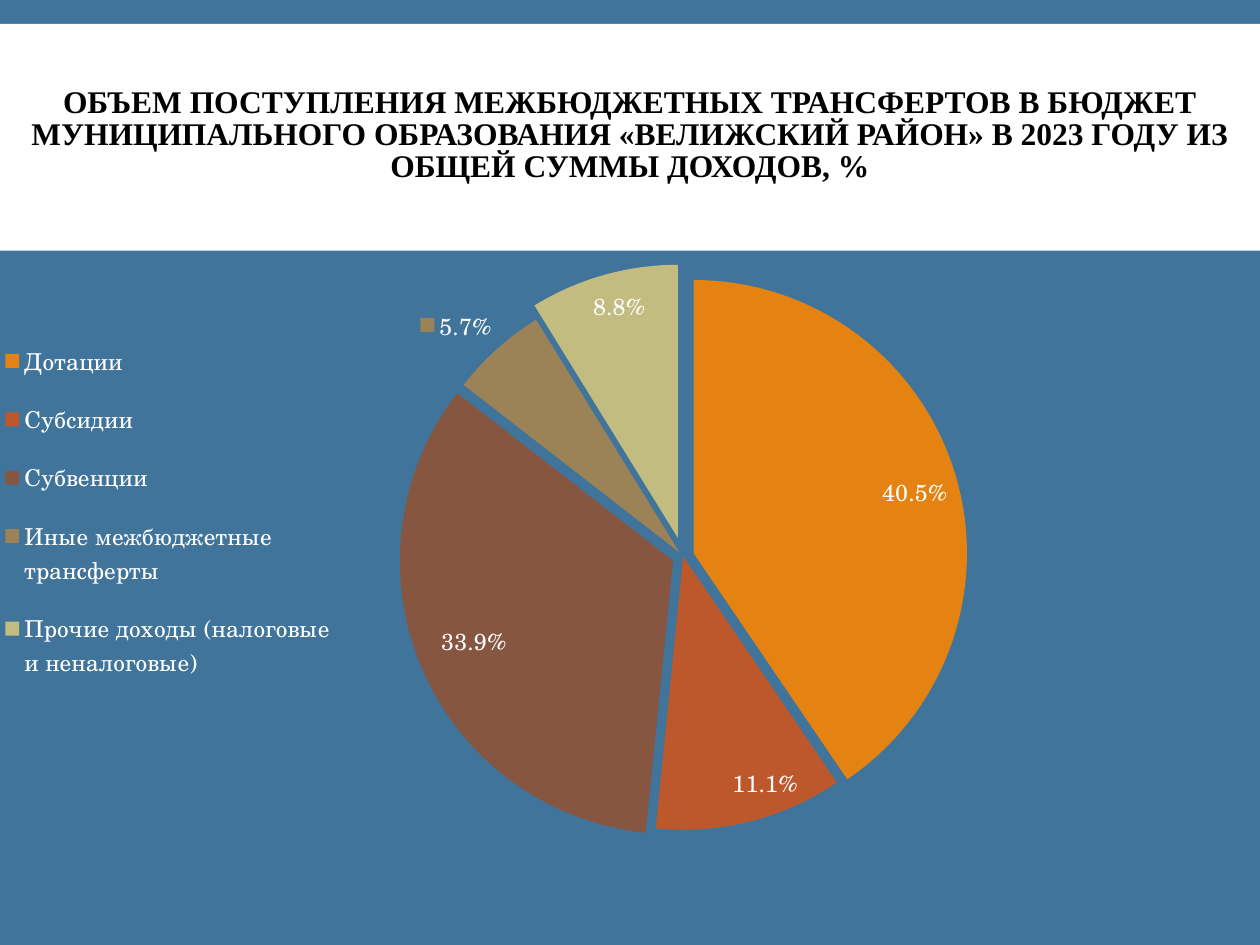
from dataclasses import dataclass

from lxml import etree
from pptx import Presentation
from pptx import util as u
from pptx.chart.data import CategoryChartData
from pptx.dml.color import RGBColor
from pptx.enum import chart as charts, shapes, text
from pptx.oxml import ns


@dataclass(frozen=True)
class Theme:
    background: str = "40749B"
    banner: str = "FFFFFF"
    heading: str = "000000"
    label: str = "FFFFFF"
    heading_font: str = "Times New Roman"
    chart_font: str = "Calibri"
    label_font: str = "TeX Gyre Schola"
    heading_size: float = 18
    chart_size: float = 10
    label_size: float = 13.3


THEME = Theme()
HEADING = (
    "ОБЪЕМ ПОСТУПЛЕНИЯ МЕЖБЮДЖЕТНЫХ ТРАНСФЕРТОВ В БЮДЖЕТ МУНИЦИПАЛЬНОГО "
    "ОБРАЗОВАНИЯ «ВЕЛИЖСКИЙ РАЙОН» В 2023 ГОДУ ИЗ ОБЩЕЙ СУММЫ ДОХОДОВ, %"
)
INCOME = [
    ("Дотации", 0.405, "E48312", 4),
    ("Субсидии", 0.111, "BD582C", 0),
    ("Субвенции", 0.339, "865640", 4),
    ("Иные межбюджетные трансферты", 0.057, "9B8357", 2),
    ("Прочие доходы (налоговые и неналоговые)", 0.088, "C2BC80", 7),
]
OUTSIDE_LABEL = 3
LABEL_SHIFTS = {1: (0.04, -0.02), 2: (0.01, -0.01), 4: (-0.01, 0.01)}


def paint(fill, color):
    fill.solid()
    fill.fore_color.rgb = RGBColor.from_string(color)


def style_font(font, name, size, color, bold=False):
    font.name = name
    font.size = u.Pt(size)
    font.bold = bold
    font.color.rgb = RGBColor.from_string(color)


def write_text(frame, content, *, align, spacing, **font_format):
    frame.word_wrap = True
    frame.auto_size = text.MSO_AUTO_SIZE.NONE
    frame.vertical_anchor = text.MSO_ANCHOR.MIDDLE
    paragraph = frame.paragraphs[0]
    paragraph.alignment = align
    paragraph.line_spacing = spacing
    run = paragraph.add_run()
    run.text = content
    style_font(run.font, **font_format)


def set_layout(part, after, **settings):
    for old in part.findall(ns.qn("c:layout")):
        part.remove(old)
    layout = etree.Element(ns.qn("c:layout"))
    manual = etree.SubElement(layout, ns.qn("c:manualLayout"))
    for tag, value in settings.items():
        etree.SubElement(manual, ns.qn(f"c:{tag}")).set("val", str(value))
    if after is None:
        part.insert(0, layout)
    else:
        after.addnext(layout)


def add_heading(slide, left, top, width, height):
    banner = slide.shapes.add_shape(
        shapes.MSO_SHAPE.RECTANGLE, left, top, width, height
    )
    banner.shadow.inherit = False
    paint(banner.fill, THEME.banner)
    banner.line.fill.background()
    slide.shapes._spTree.insert(2, banner._element)

    heading = slide.shapes.title
    heading.left, heading.width = left, width
    heading.height = u.Inches(1.32)
    heading.top = top + u.Inches(0.23)
    write_text(
        heading.text_frame, HEADING, align=text.PP_ALIGN.CENTER, spacing=0.85,
        name=THEME.heading_font, size=THEME.heading_size,
        color=THEME.heading, bold=True,
    )


def format_slices(income):
    for index, (_, _, color, offset) in enumerate(INCOME):
        slice_format = income.points[index].format
        paint(slice_format.fill, color)
        slice_format.line.fill.background()
        if offset:
            point = income._element.findall(ns.qn("c:dPt"))[index]
            explosion = etree.Element(ns.qn("c:explosion"))
            explosion.set("val", str(offset))
            point.find(ns.qn("c:spPr")).addprevious(explosion)


def format_labels(income, label_format):
    labels = income.data_labels
    labels.show_value = True
    labels.show_percentage = False
    labels.number_format = "0.0%"
    labels.number_format_is_linked = False
    labels.position = charts.XL_LABEL_POSITION.INSIDE_END
    style_font(labels.font, *label_format)

    for index in sorted([OUTSIDE_LABEL, *LABEL_SHIFTS]):
        label = income.points[index].data_label
        style_font(label.font, *label_format)
        label_xml = labels._element.findall(ns.qn("c:dLbl"))[-1]
        if index == OUTSIDE_LABEL:
            label.position = charts.XL_LABEL_POSITION.OUTSIDE_END
            label_xml.find(ns.qn("c:showLegendKey")).set("val", "1")
        else:
            label.position = charts.XL_LABEL_POSITION.INSIDE_END
            x, y = LABEL_SHIFTS[index]
            set_layout(label_xml, label_xml.find(ns.qn("c:idx")), x=x, y=y)


def add_income_pie(slide, left, top, width, height):
    names, shares, _, _ = zip(*INCOME)
    data = CategoryChartData(number_format="0.0%")
    data.categories = names
    data.add_series("Series 1", shares)
    pie = slide.shapes.add_chart(
        charts.XL_CHART_TYPE.PIE, left, top, width, height, data
    ).chart
    pie.has_title = False
    style_font(pie.font, THEME.chart_font, THEME.chart_size, THEME.label)
    label_format = (THEME.label_font, THEME.label_size, THEME.label)

    pie.has_legend = True
    legend = pie.legend
    legend.position = charts.XL_LEGEND_POSITION.BOTTOM
    legend.include_in_layout = False
    style_font(legend.font, *label_format)
    legend_xml = legend._element
    set_layout(legend_xml, legend_xml.find(ns.qn("c:legendPos")),
               xMode="edge", yMode="edge", x=0, y=0.1, w=0.27, h=0.57)

    plot = pie.plots[0]
    plot.vary_by_categories = True
    set_layout(plot._element.getparent(), None, layoutTarget="inner",
               xMode="edge", yMode="edge", x=0.33, y=0.046, w=0.44, h=0.81)
    income = plot.series[0]
    format_slices(income)
    format_labels(income, label_format)


def main():
    deck = Presentation()
    deck.slide_width, deck.slide_height = u.Inches(10), u.Inches(7.5)
    slide = deck.slides.add_slide(deck.slide_layouts[5])
    paint(slide.background.fill, THEME.background)
    add_heading(slide, 0, u.Inches(0.19), deck.slide_width, u.Inches(1.8))
    add_income_pie(slide, 0, u.Inches(2), u.Inches(9.86), u.Inches(5.36))
    deck.save("out.pptx")


if __name__ == "__main__":
    main()
